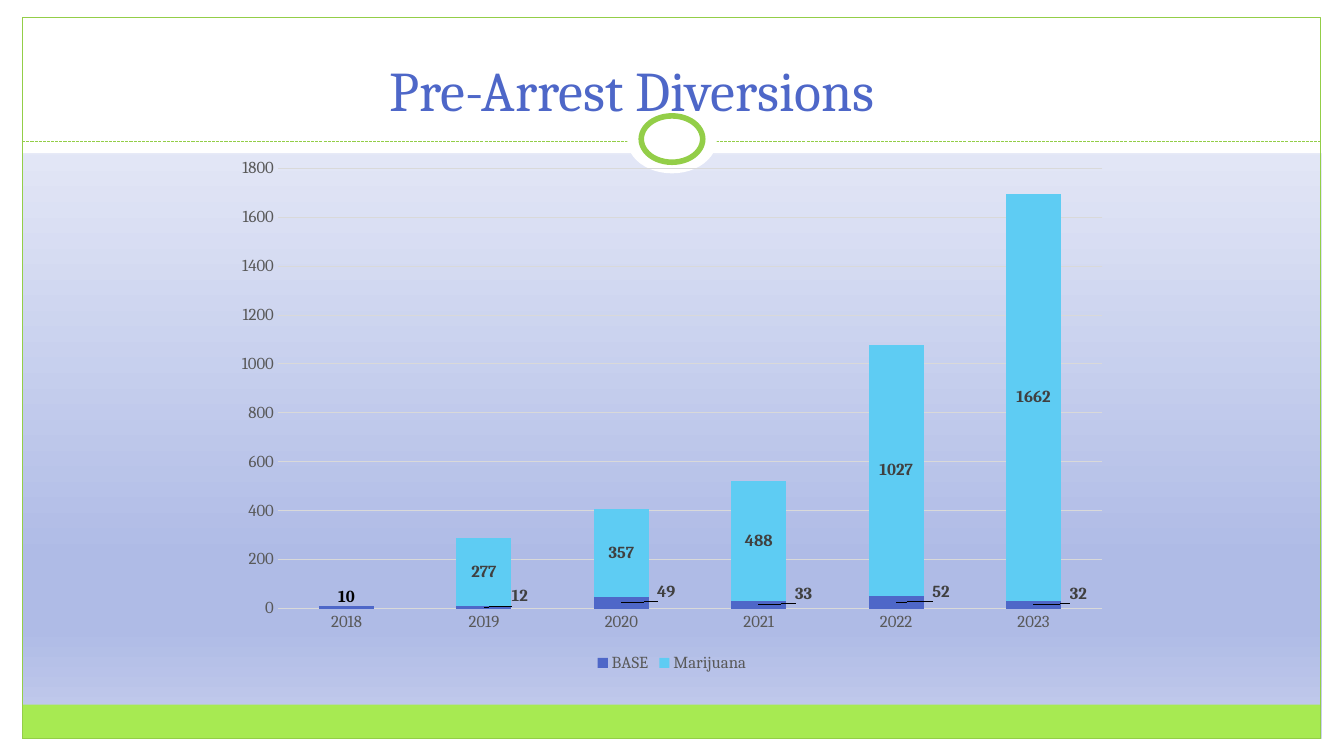
from lxml import etree
from pptx import Presentation
from pptx.chart.data import CategoryChartData
from pptx.dml.color import RGBColor
from pptx.enum.chart import XL_CHART_TYPE as CHART, XL_LEGEND_POSITION as LEGEND, XL_TICK_MARK as TICK
from pptx.enum.dml import MSO_LINE
from pptx.enum.shapes import MSO_CONNECTOR as CONNECTOR, MSO_SHAPE as SHAPE
from pptx.enum.text import MSO_ANCHOR as ANCHOR, PP_ALIGN as ALIGN
from pptx.oxml.ns import qn
from pptx.util import Inches, Pt

FONT = "Cambria"
WHITE, GREEN, LIME = "FFFFFF", "93CE48", "A7EA52"
BLUE, CYAN = "4E67C8", "5ECCF3"
GREY, DARK, GRID = "595959", "404040", "D9D9D9"
WIDTH, HEIGHT = 13.33, 7.5
BACKGROUND = [(0, "F6F7FC"), (74, "AFBBE6"), (83, "AFBBE6"), (100, "CAD1EE")]
YEARS = ["2018", "2019", "2020", "2021", "2022", "2023"]
SERIES = [
    ("BASE", BLUE, [10, 12, 49, 33, 52, 32]),
    ("Marijuana", CYAN, [None, 277, 357, 488, 1027, 1662]),
]
# Shift of each BASE label from the bar centre, as parts of the chart's size
BASE_LABEL_SHIFTS = [(0, -0.02), (0.04, -0.02), (0.05, -0.02),
                     (0.05, -0.02), (0.05, -0.02), (0.05, -0.02)]


def rgb(color):
    return RGBColor.from_string(color)


def style_font(font, size, color, bold=False):
    font.name, font.size, font.bold = FONT, Pt(size), bold
    font.color.rgb = rgb(color)


def style_line(line, color, width):
    line.color.rgb = rgb(color)
    line.width = Pt(width)


def set_background(slide, stops):
    """Fill the slide from top to bottom with (percent, colour) stops."""
    fill = slide.background.fill
    fill.gradient()
    fill.gradient_angle = 270
    stop_list = slide.element.find(".//" + qn("a:gsLst"))
    for old in list(stop_list):
        stop_list.remove(old)
    for percent, color in stops:
        stop = etree.SubElement(stop_list, qn("a:gs"), pos=str(percent * 1000))
        etree.SubElement(stop, qn("a:srgbClr"), val=color)


def add_shape(slide, kind, box, fill=None, line=None, width=0.75):
    sp = slide.shapes.add_shape(kind, *map(Inches, box))
    sp.shadow.inherit = False
    if fill:
        sp.fill.solid()
        sp.fill.fore_color.rgb = rgb(fill)
    else:
        sp.fill.background()
    if line:
        style_line(sp.line, line, width)
    else:
        sp.line.fill.background()
    return sp


def add_dashed_line(slide, x1, y1, x2, y2):
    line = slide.shapes.add_connector(CONNECTOR.STRAIGHT, *map(Inches, (x1, y1, x2, y2)))
    style_line(line.line, GREEN, 0.75)
    line.line.dash_style = MSO_LINE.SQUARE_DOT
    etree.SubElement(line.element.spPr, qn("a:effectLst"))


def add_text(slide, box, text, size, color, align=ALIGN.CENTER, anchor=ANCHOR.BOTTOM):
    tf = slide.shapes.add_textbox(*map(Inches, box)).text_frame
    tf.word_wrap = True
    tf.vertical_anchor = anchor
    p = tf.paragraphs[0]
    p.alignment = align
    r = p.add_run()
    r.text = text
    style_font(r.font, size, color)


def add_frame(slide):
    for box in [(0, 7.33, WIDTH, 0.17), (0, 0, WIDTH, 1.52),
                (0, 0, 0.22, HEIGHT), (13.11, 0, 0.22, HEIGHT)]:
        add_shape(slide, SHAPE.RECTANGLE, box, WHITE)
    add_shape(slide, SHAPE.RECTANGLE, (0.22, 6.99, 12.88, 0.34), LIME)
    add_shape(slide, SHAPE.RECTANGLE, (0.22, 0.17, 12.88, 7.16), line=GREEN)
    add_dashed_line(slide, 0.22, 1.4, 13.1, 1.4)
    add_shape(slide, SHAPE.OVAL, (6.22, 1.05, 0.89, 0.67), WHITE)
    add_shape(slide, SHAPE.OVAL, (6.36, 1.15, 0.61, 0.46), WHITE, GREEN, 4)


def style_axis(axis):
    axis.major_tick_mark = axis.minor_tick_mark = TICK.NONE
    style_font(axis.tick_labels.font, 12, GREY)


def shift_labels(series, shifts):
    """Give each point its own label, moved by a manual layout."""
    for i, shift in enumerate(shifts):
        font = series.points[i].data_label.font
        style_font(font, 12, DARK if i else "000000", bold=True)
    for label, shift in zip(series.data_labels._element.findall(qn("c:dLbl")), shifts):
        layout = etree.Element(qn("c:layout"))
        manual = etree.SubElement(layout, qn("c:manualLayout"))
        for axis, value in zip("xy", shift):
            etree.SubElement(manual, qn("c:" + axis), val=str(value))
        label.insert(1, layout)


def add_diversions_chart(slide, box):
    data = CategoryChartData()
    data.categories = YEARS
    for name, _, values in SERIES:
        data.add_series(name, values)
    chart = slide.shapes.add_chart(CHART.COLUMN_STACKED, *map(Inches, box), data).chart
    style_font(chart.font, 10, "000000")
    chart.has_title = False
    chart.has_legend = True
    chart.legend.position = LEGEND.BOTTOM
    chart.legend.include_in_layout = False
    style_font(chart.legend.font, 12, GREY)

    style_axis(chart.category_axis)
    style_line(chart.category_axis.format.line, GRID, 0.75)
    style_axis(chart.value_axis)
    chart.value_axis.format.line.fill.background()
    chart.value_axis.maximum_scale = 1800
    chart.value_axis.major_unit = 200
    style_line(chart.value_axis.major_gridlines.format.line, GRID, 0.75)

    plot = chart.plots[0]
    plot.gap_width, plot.overlap = 150, 100
    plot.vary_by_categories = False
    for series, (_, color, _) in zip(plot.series, SERIES):
        series.format.fill.solid()
        series.format.fill.fore_color.rgb = rgb(color)
        series.data_labels.show_value = True
        style_font(series.data_labels.font, 12, DARK, bold=True)
    shift_labels(plot.series[0], BASE_LABEL_SHIFTS)


def main():
    prs = Presentation()
    prs.slide_width, prs.slide_height = Inches(WIDTH), Inches(HEIGHT)
    slide = prs.slides.add_slide(prs.slide_layouts[6])
    set_background(slide, BACKGROUND)
    add_frame(slide)
    add_text(slide, (0.52, -0.18, 11.5, 1.45), "Pre-Arrest Diversions", 40, BLUE)
    add_diversions_chart(slide, (2.22, 1.47, 8.89, 5.24))
    prs.save("out.pptx")


if __name__ == "__main__":
    main()
